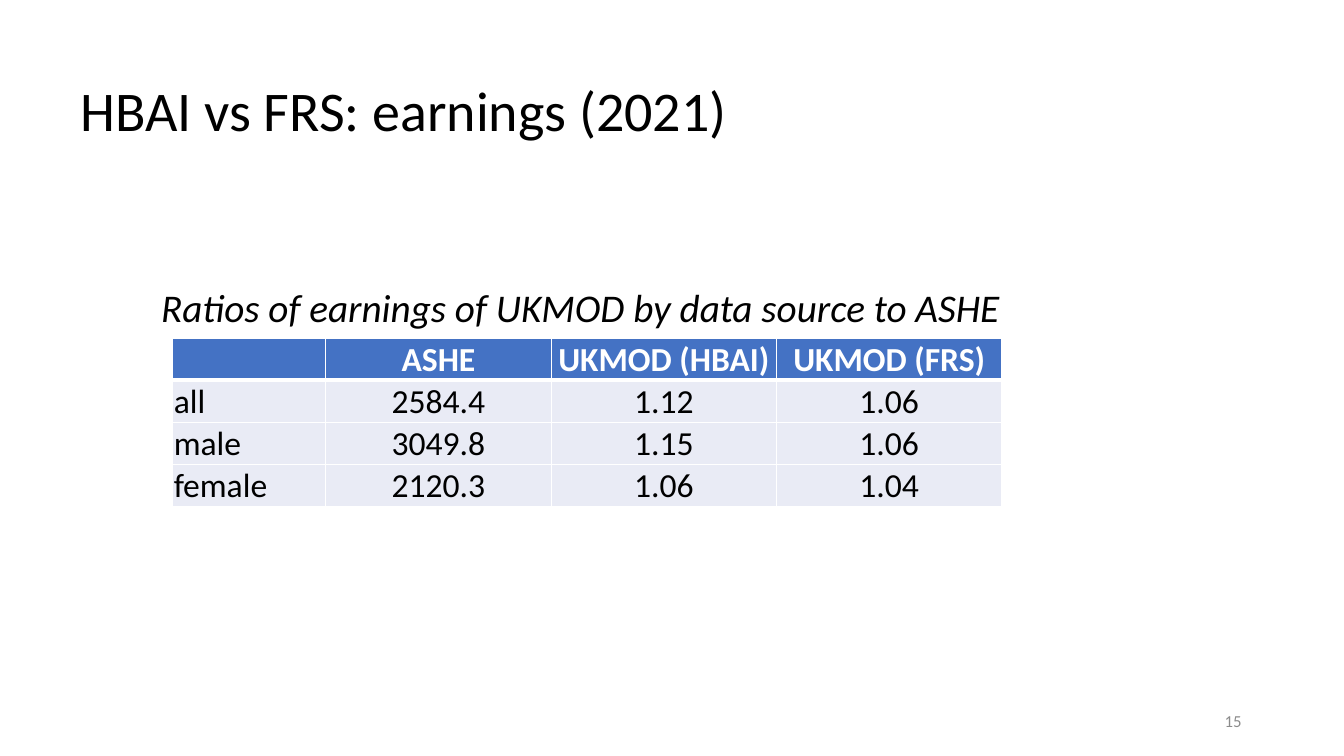
"""Build the slide comparing HBAI and FRS earnings ratios for 2021."""
from dataclasses import dataclass

from lxml import etree
from pptx import Presentation
from pptx.dml.color import RGBColor
from pptx.enum.text import MSO_ANCHOR, MSO_AUTO_SIZE, PP_ALIGN
from pptx.oxml.ns import qn
from pptx.util import Cm, Pt

LEFT, CENTER, RIGHT = PP_ALIGN.LEFT, PP_ALIGN.CENTER, PP_ALIGN.RIGHT
MIDDLE, BOTTOM = MSO_ANCHOR.MIDDLE, MSO_ANCHOR.BOTTOM
NO_FIT, GROW = MSO_AUTO_SIZE.NONE, MSO_AUTO_SIZE.SHAPE_TO_FIT_TEXT


@dataclass(frozen=True)
class Theme:
    font: str = "Calibri"
    ink: str = "000000"
    white: str = "FFFFFF"
    header: str = "4472C4"
    band: str = "E9EBF5"
    muted: str = "8C8C8C"
    title_size: int = 40
    caption_size: int = 28
    table_size: int = 24
    number_size: int = 12


THEME = Theme()


def write(frame, text, size, color=THEME.ink, align=LEFT, bold=False, italic=False, spacing=None):
    paragraph = frame.paragraphs[0]
    paragraph.alignment = align
    paragraph.line_spacing = spacing
    run = paragraph.add_run()
    run.text = text
    run.font.name = THEME.font
    run.font.size = Pt(size)
    run.font.bold = bold
    run.font.italic = italic
    run.font.color.rgb = RGBColor.from_string(color)


def add_border(cell, side, width):
    line = etree.SubElement(cell._tc.get_or_add_tcPr(), qn(f"a:ln{side}"), w=str(Pt(width)))
    fill = etree.SubElement(line, qn("a:solidFill"))
    etree.SubElement(fill, qn("a:srgbClr"), val=THEME.white)


prs = Presentation()
prs.slide_width, prs.slide_height = Cm(33.87), Cm(19.05)
slide = prs.slides.add_slide(prs.slide_layouts[5])

title = slide.shapes.title
title.left, title.top, title.width, title.height = Cm(1.78), Cm(1.02), Cm(29.21), Cm(3.68)
title.text_frame.auto_size = NO_FIT
title.text_frame.vertical_anchor = MIDDLE
write(title.text_frame, "HBAI vs FRS: earnings (2021)", THEME.title_size, spacing=0.9)

page_number = slide.shapes.add_textbox(Cm(30.3), Cm(17.65), Cm(1.24), Cm(1.02)).text_frame
page_number.word_wrap = True
page_number.vertical_anchor = MIDDLE
write(page_number, "15", THEME.number_size, color=THEME.muted, align=RIGHT)

ROWS = [
    ["", "ASHE", "UKMOD (HBAI)", "UKMOD (FRS)"],
    ["all", "2584.4", "1.12", "1.06"],
    ["male", "3049.8", "1.15", "1.06"],
    ["female", "2120.3", "1.06", "1.04"],
]
COLUMN_WIDTHS = [3.86, 5.68, 5.68, 5.68]
ROW_HEIGHT = 1.06

earnings = slide.shapes.add_table(
    len(ROWS), len(COLUMN_WIDTHS), Cm(4.35), Cm(8.52),
    Cm(sum(COLUMN_WIDTHS)), Cm(ROW_HEIGHT * len(ROWS))).table
for column, width in zip(earnings.columns, COLUMN_WIDTHS):
    column.width = Cm(width)

for r, values in enumerate(ROWS):
    earnings.rows[r].height = Cm(ROW_HEIGHT)
    is_header = r == 0
    for c, value in enumerate(values):
        cell = earnings.cell(r, c)
        cell.margin_left = cell.margin_right = cell.margin_top = Cm(0.03)
        cell.margin_bottom = 0
        cell.vertical_anchor = BOTTOM
        for side, width in {"L": 1, "R": 1, "T": 3 if r == 1 else 1, "B": 3 if is_header else 1}.items():
            add_border(cell, side, width)
        cell.fill.solid()
        cell.fill.fore_color.rgb = RGBColor.from_string(THEME.header if is_header else THEME.band)
        if value:
            write(cell.text_frame, value, THEME.table_size, bold=is_header,
                  color=THEME.white if is_header else THEME.ink,
                  align=CENTER if c else LEFT)

caption = slide.shapes.add_textbox(Cm(3.81), Cm(7.01), Cm(21.89), Cm(1.45)).text_frame
caption.word_wrap = False
caption.auto_size = GROW
write(caption, "Ratios of earnings of UKMOD by data source to ASHE", THEME.caption_size, italic=True)

prs.save("out.pptx")
